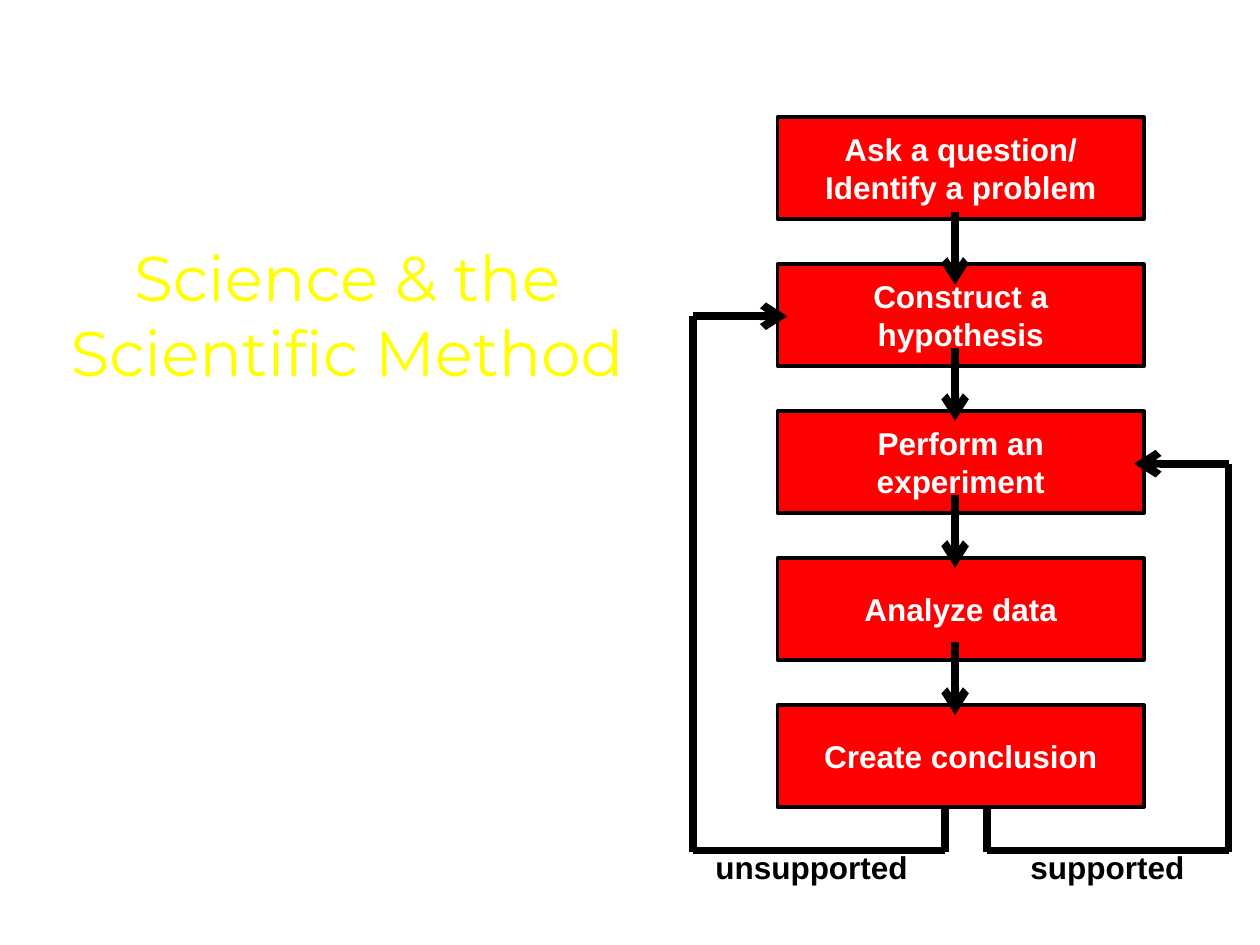
from typing import NamedTuple

from lxml import etree
from pptx import Presentation
from pptx import util as u
from pptx.dml.color import RGBColor
from pptx.enum import shapes, text
from pptx.oxml.ns import qn

BLACK, WHITE, RED, YELLOW = "000000", "FFFFFF", "FF0000", "FFFF00"
BOX_LEFT, BOX_TOP, BOX_W, BOX_H = 6.17, 0.93, 2.91, 0.81
BOX_STEP = 3.5 / 3
ARROW_X, ARROW_LEN = 7.58, 0.58
FIRST_ARROW_TOP, NEXT_ARROW_TOP = 1.68, 2.76
LOOP_BOTTOM = 6.75

STEPS = [
    "Ask a question/\nIdentify a problem",
    "Construct a hypothesis",
    "Perform an experiment",
    "Analyze data",
    "Create conclusion",
]


class Loop(NamedTuple):
    label: str
    label_left: float
    start_x: float
    start_y: float
    side_x: float
    end_x: float
    end_y: float


LOOPS = [
    Loop("supported", 8.08, 7.83, 6.39, 9.75, 9, 3.68),
    Loop("unsupported", 5.58, 7.5, 6.35, 5.5, 6.25, 2.51),
]


def rgb(value: str) -> RGBColor:
    return RGBColor.from_string(value)


def write(tf, content: str, size: float, font: str, color: str, bold: bool, align) -> None:
    """Fill a text frame with one paragraph for each line of content."""
    for i, line in enumerate(content.split("\n")):
        p = tf.paragraphs[0] if i == 0 else tf.add_paragraph()
        p.text = line
        p.alignment = align
        p.font.name, p.font.size, p.font.bold = font, u.Pt(size), bold
        p.font.color.rgb = rgb(color)


def add_step(s, index: int) -> None:
    top = BOX_TOP + index * BOX_STEP
    sp = s.shapes.add_shape(
        shapes.MSO_SHAPE.RECTANGLE,
        u.Inches(BOX_LEFT), u.Inches(top), u.Inches(BOX_W), u.Inches(BOX_H),
    )
    sp.shadow.inherit = False
    sp.fill.solid()
    sp.fill.fore_color.rgb = rgb(RED)
    sp.line.color.rgb = rgb(BLACK)
    sp.line.width = u.Pt(2)
    sp.text_frame.vertical_anchor = text.MSO_ANCHOR.MIDDLE
    write(sp.text_frame, STEPS[index], 18, "Arial", WHITE, True, text.PP_ALIGN.CENTER)


def add_line(s, x1: float, y1: float, x2: float, y2: float, arrow: bool = False) -> None:
    c = s.shapes.add_connector(
        shapes.MSO_CONNECTOR.STRAIGHT,
        u.Inches(x1), u.Inches(y1), u.Inches(x2), u.Inches(y2),
    )
    c.line.color.rgb = rgb(BLACK)
    c.line.width = u.Pt(4.5)
    if arrow:
        ln = c._element.spPr.find(qn("a:ln"))
        etree.SubElement(ln, qn("a:tailEnd"), type="arrow")
    etree.SubElement(c._element.spPr, qn("a:effectLst"))


def add_loop(s, loop: Loop) -> None:
    """Lead from the conclusion down, sideways and back up to an earlier step."""
    corner = LOOP_BOTTOM + 0.01
    add_line(s, loop.start_x, loop.start_y, loop.start_x, corner)
    add_line(s, loop.start_x, LOOP_BOTTOM, loop.side_x, LOOP_BOTTOM)
    add_line(s, loop.side_x, loop.end_y, loop.side_x, corner)
    add_line(s, loop.side_x, loop.end_y, loop.end_x, loop.end_y, arrow=True)


def add_text(s, left: float, top: float, width: float, height: float, wrap: bool):
    sp = s.shapes.add_textbox(u.Inches(left), u.Inches(top), u.Inches(width), u.Inches(height))
    sp.text_frame.word_wrap = wrap
    return sp.text_frame


def main() -> None:
    prs = Presentation()
    prs.slide_width, prs.slide_height = u.Inches(10), u.Inches(7.5)
    s = prs.slides.add_slide(prs.slide_layouts[6])

    # The loops lie above the boxes they point at and below the conclusion.
    last = len(STEPS) - 1
    for i in range(last):
        add_step(s, i)
    for loop in LOOPS:
        add_loop(s, loop)
    add_step(s, last)

    for loop in LOOPS:
        tf = add_text(s, loop.label_left, 6.68, 2, 0.4, wrap=True)
        write(tf, loop.label, 18, "Arial", BLACK, True, text.PP_ALIGN.LEFT)

    arrow_tops = [FIRST_ARROW_TOP] + [NEXT_ARROW_TOP + i * BOX_STEP for i in range(last - 1)]
    for top in arrow_tops:
        add_line(s, ARROW_X, top, ARROW_X, top + ARROW_LEN, arrow=True)

    tf = add_text(s, 0.17, 1.84, 5.17, 3.91, wrap=False)
    write(tf, "Science & the\nScientific Method", 36, "Montserrat", YELLOW, False,
          text.PP_ALIGN.CENTER)
    prs.save("out.pptx")


if __name__ == "__main__":
    main()
